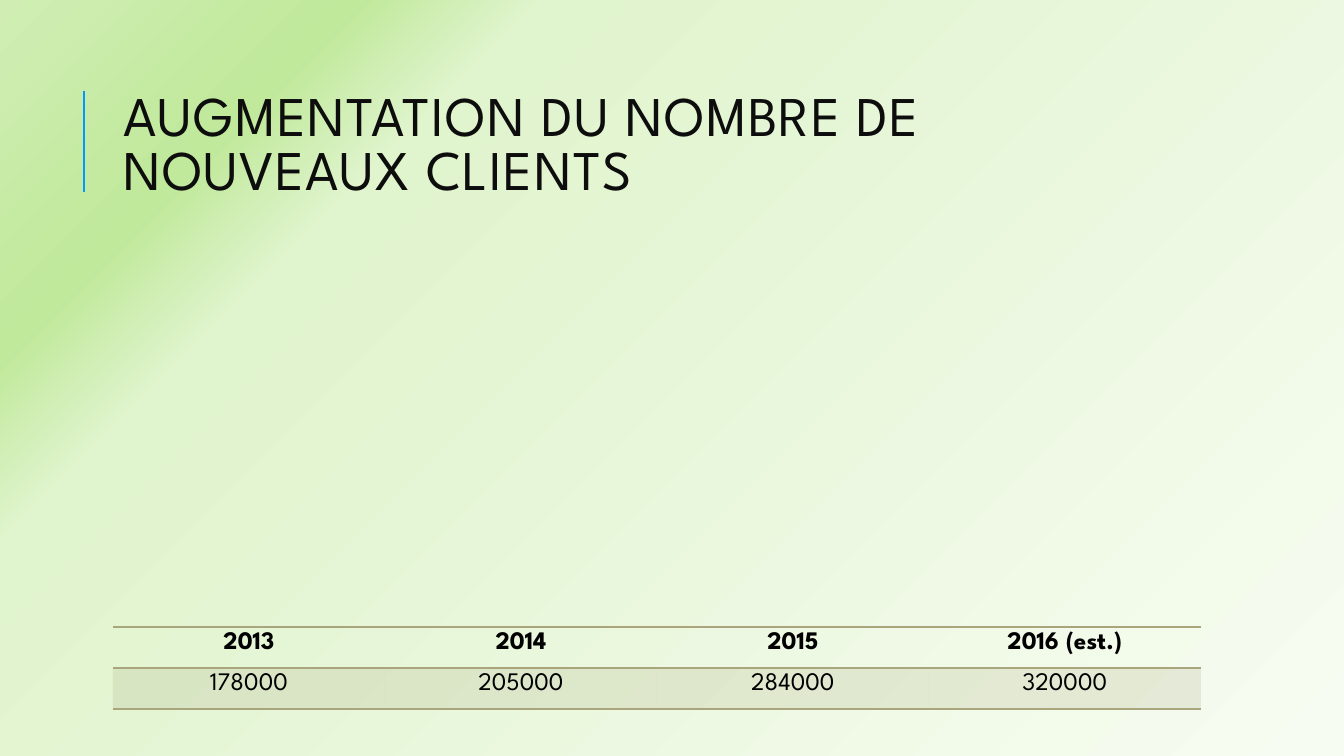
from lxml.etree import SubElement
from pptx import Presentation
from pptx.dml.color import RGBColor
from pptx.enum.shapes import MSO_CONNECTOR
from pptx.enum.text import MSO_ANCHOR, MSO_AUTO_SIZE, PP_ALIGN
from pptx.oxml import parse_xml
from pptx.oxml.ns import nsdecls, qn
from pptx.util import Pt

COLORS = {"title": "0D0D0D", "text": "000000", "accent": "0099FF", "rule": "A9A57C"}
BACKGROUND_STOPS = [(0, "F7FCF2"), (74, "E0F4CD"), (83, "C0E99B"), (100, "D0EEB4")]
NO_GRID_STYLE = "{2D5ABB26-0587-4C30-8999-92F81FD0307C}"
NEW_CLIENTS = [
    ("2013", "178000"),
    ("2014", "205000"),
    ("2015", "284000"),
    ("2016 (est.)", "320000"),
]


def px(length):
    return round(length * 914400 / 100.8)


def rgb(name):
    return RGBColor.from_string(COLORS[name])


class SlideBuilder:
    font = "League Spartan"

    def __init__(self, slide):
        self.slide = slide

    def background(self, stops):
        """Fill the background with a circular gradient centred at bottom right."""
        self.slide.background.fill.solid()
        properties = self.slide.element.find(".//" + qn("p:bgPr"))
        stop_xml = "".join(
            f'<a:gs pos="{position * 1000}"><a:srgbClr val="{color}"/></a:gs>'
            for position, color in stops
        )
        gradient = parse_xml(
            f'<a:gradFill rotWithShape="1" {nsdecls("a")}><a:gsLst>{stop_xml}</a:gsLst>'
            '<a:path path="circle"><a:fillToRect l="100000" t="100000"/></a:path>'
            '<a:tileRect r="-100000" b="-100000"/></a:gradFill>'
        )
        properties.replace(properties[0], gradient)

    def add_run(self, paragraph, text, size, color, bold=False):
        run = paragraph.add_run()
        run.text = text
        run.font.name = self.font
        run.font.size = Pt(size)
        run.font.bold = bold
        run.font.color.rgb = rgb(color)
        return run

    def title(self, text, left, top, width, height):
        heading = self.slide.shapes.title
        heading.left, heading.top = px(left), px(top)
        heading.width, heading.height = px(width), px(height)
        frame = heading.text_frame
        frame.word_wrap = True
        frame.auto_size = MSO_AUTO_SIZE.NONE
        frame.vertical_anchor = MSO_ANCHOR.MIDDLE
        paragraph = frame.paragraphs[0]
        paragraph.alignment = PP_ALIGN.LEFT
        paragraph.line_spacing = 0.8
        run = self.add_run(paragraph, text, 40, "title")
        run.font._element.set("spc", "100")

    def line(self, x1, y1, x2, y2, color, weight):
        rule = self.slide.shapes.add_connector(
            MSO_CONNECTOR.STRAIGHT, px(x1), px(y1), px(x2), px(y2)
        )
        rule.line.color.rgb = rgb(color)
        rule.line.width = Pt(weight)
        SubElement(rule._element.spPr, qn("a:effectLst"))

    def table(self, columns, left, top, column_width, row_height):
        """Place a ruled table; each column is a tuple of a heading and its values."""
        row_count = len(columns[0])
        grid = self.slide.shapes.add_table(
            row_count, len(columns), px(left), px(top),
            px(column_width * len(columns)), px(row_height * row_count),
        ).table
        grid.horz_banding = False
        grid._tbl.tblPr.find(qn("a:tableStyleId")).text = NO_GRID_STYLE
        for row in grid.rows:
            row.height = px(row_height)
        for column_index, values in enumerate(columns):
            grid.columns[column_index].width = px(column_width)
            for row_index, value in enumerate(values):
                self.cell(grid.cell(row_index, column_index), value, row_index == 0)

    def cell(self, cell, text, is_header):
        paragraph = cell.text_frame.paragraphs[0]
        paragraph.alignment = PP_ALIGN.CENTER
        self.add_run(paragraph, text, 18, "text", bold=is_header)
        properties = cell._tc.get_or_add_tcPr()
        if is_header:
            cell.fill.background()
        else:
            cell.fill.solid()
            cell.fill.fore_color.rgb = rgb("rule")
            tint = properties.find(".//" + qn("a:srgbClr"))
            SubElement(tint, qn("a:alpha"), val="20000")
        for index, side in enumerate(("lnT", "lnB")):
            properties.insert(index, parse_xml(
                f'<a:{side} w="{Pt(1)}" {nsdecls("a")}><a:solidFill>'
                f'<a:srgbClr val="{COLORS["rule"]}"/></a:solidFill></a:{side}>'
            ))


def main():
    deck = Presentation()
    deck.slide_width, deck.slide_height = px(1344), px(756)
    builder = SlideBuilder(deck.slides.add_slide(deck.slide_layouts[5]))
    builder.background(BACKGROUND_STOPS)
    builder.line(84, 192, 84, 91, "accent", 1.5)
    builder.title("AUGMENTATION DU NOMBRE DE NOUVEAUX CLIENTS", 113, 65, 1072, 165)
    builder.table(NEW_CLIENTS, 113, 627, 272, 41)
    deck.save("out.pptx")


if __name__ == "__main__":
    main()
